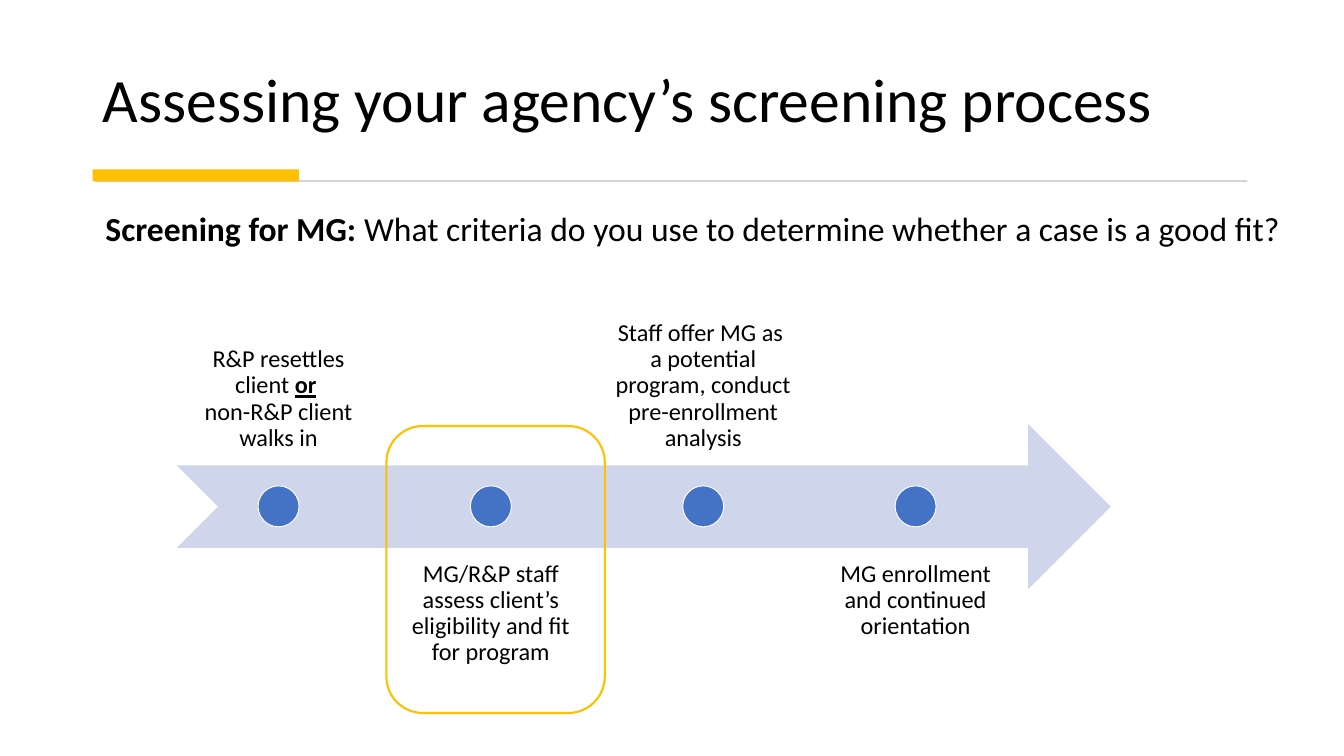
from pptx import Presentation
from pptx.dml.color import RGBColor
from pptx.enum import shapes, text
from pptx import util as u

BLACK = RGBColor(0x00, 0x00, 0x00)
WHITE = RGBColor(0xFF, 0xFF, 0xFF)
GRAY = RGBColor(0xD5, 0xD5, 0xD5)
GOLD = RGBColor(0xFF, 0xC0, 0x00)
BLUE = RGBColor(0x44, 0x72, 0xC4)
PALE = RGBColor(0xCF, 0xD5, 0xEA)

KIND = shapes.MSO_SHAPE
ALIGN = text.PP_ALIGN
ANCHOR = text.MSO_ANCHOR
COLS, ROWS = 20, 11.25


class Deck:
    """Style and current slide; places are columns and rows of the grid."""

    font = "Calibri"

    def __init__(self):
        self.prs = Presentation()
        self.prs.slide_width = u.Inches(COLS)
        self.prs.slide_height = u.Inches(ROWS)
        self.cell = self.prs.slide_width / COLS
        self.slide = self.prs.slides.add_slide(self.prs.slide_layouts[5])

    def grid(self, *box):
        return [round(n * self.cell) for n in box]

    def letter(self, box, runs, size, anchor, pad, **form):
        """Fill a text frame; each run is a text with its font values."""
        frame = box.text_frame
        margins = dict(zip(("left", "top", "right", "bottom"), pad))
        for side, gap in margins.items():
            setattr(frame, f"margin_{side}", u.Inches(gap))
        frame.word_wrap = True
        frame.auto_size = text.MSO_AUTO_SIZE.NONE
        frame.vertical_anchor = anchor
        para = frame.paragraphs[0]
        for name, value in form.items():
            setattr(para, name, value)
        for words, look in runs:
            for i, line in enumerate(words.split("\n")):
                if i:
                    para.add_line_break()
                run = para.add_run()
                run.text = line
                base = {"name": self.font, "size": u.Pt(size), "bold": False}
                for name, value in {**base, **look}.items():
                    setattr(run.font, name, value)
                run.font.color.rgb = BLACK

    def title(self, box, words, size, pad):
        shape = self.slide.shapes.title
        shape.left, shape.top, shape.width, shape.height = self.grid(*box)
        self.letter(shape, [(words, {})], size, ANCHOR.BOTTOM, pad,
                    alignment=ALIGN.LEFT, line_spacing=0.9)

    def label(self, box, runs, size, anchor, pad, **form):
        shape = self.slide.shapes.add_textbox(*self.grid(*box))
        self.letter(shape, runs, size, anchor, pad, **form)

    def shape(self, kind, box, fill=None, line=None, width=1):
        shape = self.slide.shapes.add_shape(kind, *self.grid(*box))
        shape.shadow.inherit = False
        for part, color in ((shape.fill, fill), (shape.line.fill, line)):
            if color is None:
                part.background()
            else:
                part.solid()
                part.fore_color.rgb = color
        if line is not None:
            shape.line.width = u.Pt(width)


def main():
    deck = Deck()
    slim = (0.15, 0.07, 0.15, 0.07)
    even = (0.2,) * 4

    # Title with its rule and accent
    deck.title((1.38, 0.42, 17.23, 1.67),
               "Assessing your agency’s screening process", 66, slim)
    deck.shape(KIND.RECTANGLE, (1.42, 2.68, 17.14, 0.03), GRAY)
    deck.shape(KIND.RECTANGLE, (1.38, 2.52, 3.07, 0.18), GOLD)

    # Question
    ask = [
        ("Screening for MG: ", {"bold": True}),
        ("What criteria do you use to determine whether a case is a good fit?",
         {}),
    ]
    deck.label((1.42, 3.02, 17.94, 1.14), ask, 36, ANCHOR.TOP, slim,
               space_after=u.Pt(9))

    # Process arrow
    deck.shape(KIND.NOTCHED_RIGHT_ARROW, (2.63, 6.31, 13.9, 2.46), PALE)

    # Steps, in turn above and below the arrow
    steps = [
        [("R&P resettles client ", {}),
         ("or", {"bold": True, "underline": True}),
         (" \nnon-R&P client walks in", {})],
        [("MG/R&P staff assess client’s eligibility and fit for program", {})],
        [("Staff offer MG as \na potential program, "
          "conduct pre-enrollment analysis", {})],
        [("MG enrollment and continued orientation", {})],
    ]
    pitch, wide, high, dot = 3.16, 3.01, 2.46, 0.61
    for i, runs in enumerate(steps):
        left = 2.64 + i * pitch
        top, anchor = ((8.15, ANCHOR.TOP) if i % 2
                       else (4.46, ANCHOR.BOTTOM))
        deck.label((left, top, wide, high), runs, 26, anchor, even,
                   alignment=ALIGN.CENTER, line_spacing=0.9,
                   space_after=u.Pt(9))
        deck.shape(KIND.OVAL, (left + (wide - dot) / 2, 7.23, dot, dot),
                   BLUE, WHITE)

    # Frame around the screening step
    deck.shape(KIND.ROUNDED_RECTANGLE, (5.75, 6.34, 3.25, 4.27),
               line=GOLD, width=2.25)

    deck.prs.save("out.pptx")


if __name__ == "__main__":
    main()
